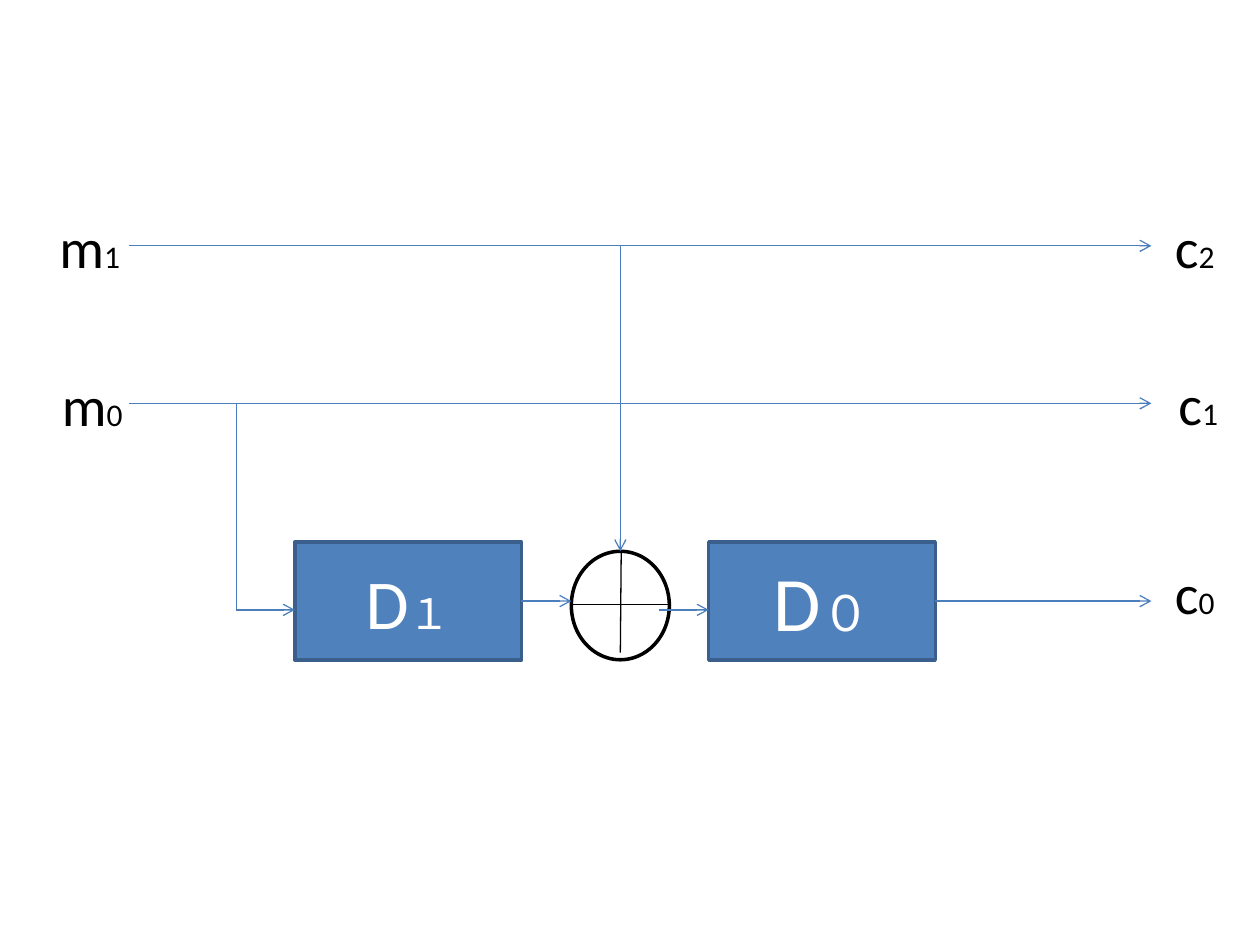
from lxml import etree
from pptx import Presentation
from pptx import util as u
from pptx.dml import color
from pptx.enum import shapes, text
from pptx.oxml import ns

RIGHT_SIDE = 3


def rgb(value):
    return color.RGBColor.from_string(value)


def set_format(target, values):
    for name, value in values.items():
        setattr(target, name, value)


class Diagram:
    """Draws the parts of an encoder diagram on one slide, in points."""

    font = "Calibri"
    ink, paper = "000000", "FFFFFF"
    wire_color, box_fill, box_line = "4B7EBC", "4F81BD", "3A5F8C"
    thin, thick = 0.75, 2
    box_frame = {"vertical_anchor": text.MSO_ANCHOR.MIDDLE, "word_wrap": True}
    label_frame = {"word_wrap": False, "auto_size": text.MSO_AUTO_SIZE.SHAPE_TO_FIT_TEXT}

    def __init__(self, slide):
        self.slide = slide

    def add_text(self, shape, frame_format, font_color, *runs):
        set_format(shape.text_frame, frame_format)
        paragraph = shape.text_frame.paragraphs[0]
        paragraph.alignment = text.PP_ALIGN.CENTER
        for words, size in runs:
            run = paragraph.add_run()
            run.text = words
            set_format(run.font, {"name": self.font, "size": u.Pt(size)})
            run.font.color.rgb = rgb(font_color)

    def outlined(self, kind, bounds, fill, line):
        shape = self.slide.shapes.add_shape(kind, *map(u.Pt, bounds))
        shape.shadow.inherit = False
        shape.fill.solid()
        shape.fill.fore_color.rgb = rgb(fill)
        shape.line.color.rgb = rgb(line)
        shape.line.width = u.Pt(self.thick)
        return shape

    def register(self, bounds, *runs):
        shape = self.outlined(shapes.MSO_SHAPE.RECTANGLE, bounds, self.box_fill, self.box_line)
        self.add_text(shape, self.box_frame, self.paper, *runs)
        return shape

    def adder(self, bounds):
        self.outlined(shapes.MSO_SHAPE.OVAL, bounds, self.paper, self.ink)

    def label(self, bounds, letter, index):
        shape = self.slide.shapes.add_textbox(*map(u.Pt, bounds))
        self.add_text(shape, self.label_frame, self.ink, (letter, 32), (index, 18))

    def line(self, points, line_color=wire_color, arrow=False, source=None):
        connector = self.slide.shapes.add_connector(
            shapes.MSO_CONNECTOR.STRAIGHT, *map(u.Pt, points))
        if source is not None:
            connector.begin_connect(source, RIGHT_SIDE)
        connector.line.color.rgb = rgb(line_color)
        connector.line.width = u.Pt(self.thin)
        properties = connector._element.spPr
        if arrow:
            etree.SubElement(properties.find(ns.qn("a:ln")), ns.qn("a:tailEnd"), type="arrow")
        etree.SubElement(properties, ns.qn("a:effectLst"))


def main():
    presentation = Presentation()
    set_format(presentation, {"slide_width": u.Pt(720), "slide_height": u.Pt(540)})
    diagram = Diagram(presentation.slides.add_slide(presentation.slide_layouts[6]))

    wire_start, wire_end = 73.5, 658
    top_wire, middle_wire = 140.5, 230.5
    output_y, input_y = 343.5, 348.5
    branch_x, adder_x = 135, 354.5
    box_top, box_width, box_height = 309.75, 129.5, 67.5
    first_left, second_left = 168.5, 405
    adder_left, adder_top, adder_width, adder_height = 326.5, 315, 56, 62

    for y in (top_wire, middle_wire):
        diagram.line((wire_start, y, wire_end, y), arrow=True)

    first = diagram.register((first_left, box_top, box_width, box_height), ("D", 40), ("１", 24))
    second = diagram.register((second_left, box_top, box_width, box_height), ("D", 44), ("０", 28))

    diagram.adder((adder_left, adder_top, adder_width, adder_height))
    diagram.line((adder_left, 345.5, adder_left + adder_width, 345.5), diagram.ink)
    diagram.line((adder_x + 0.5, adder_top, adder_x, 373), diagram.ink)

    diagram.line((adder_x, top_wire, adder_x, adder_top), arrow=True)
    diagram.line((376.5, input_y, second_left, input_y), arrow=True)
    diagram.line((first_left + box_width, output_y, adder_left, output_y), arrow=True, source=first)
    diagram.line((branch_x, input_y, first_left, input_y), arrow=True)
    diagram.line((branch_x, middle_wire, branch_x, input_y))
    diagram.line((second_left + box_width, output_y, wire_end, output_y), arrow=True, source=second)

    for left, top, width, letter, index in (
        (26.5, 118, 49.5, "m", "1"),
        (28, 208, 49.5, "m", "0"),
        (664, 118, 37.5, "c", "2"),
        (666, 207.5, 37.5, "c", "1"),
        (664, 315.5, 37.5, "c", "0"),
    ):
        diagram.label((left, top, width, 46), letter, index)

    presentation.save("out.pptx")


if __name__ == "__main__":
    main()
